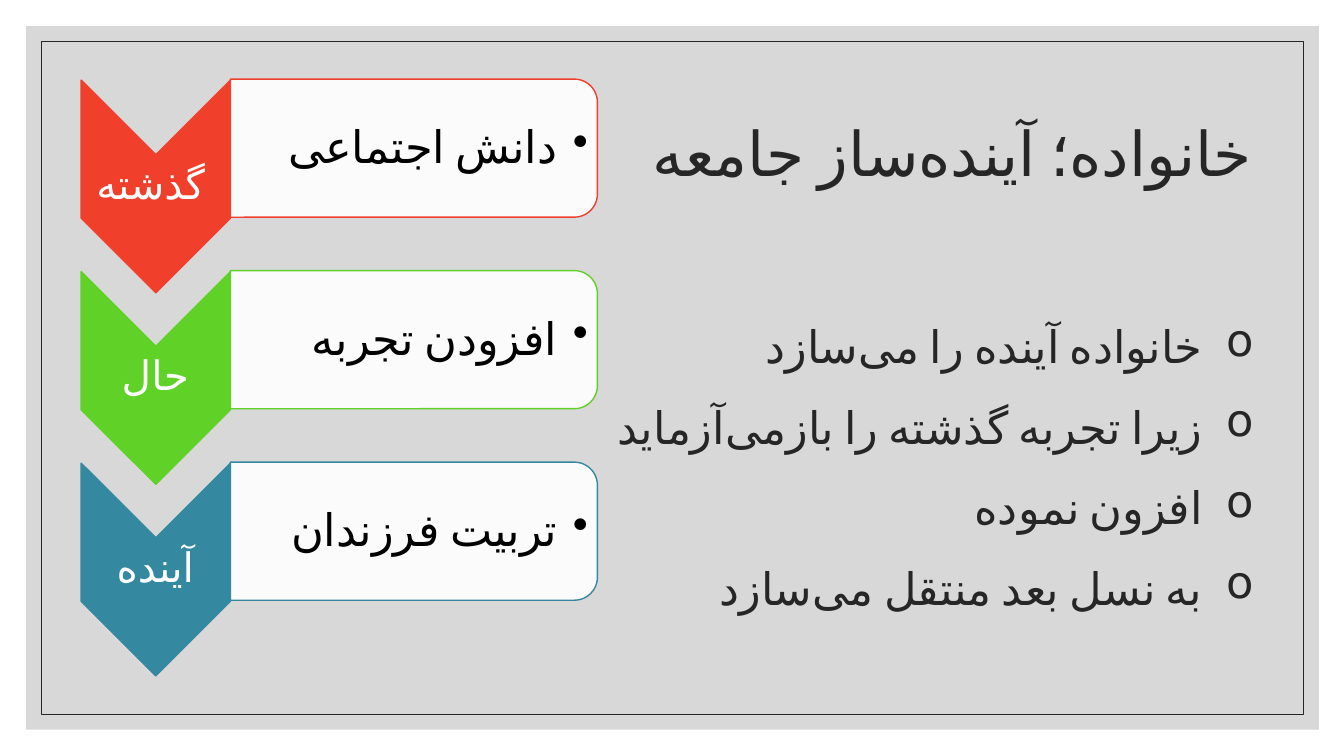
from dataclasses import dataclass

from lxml.etree import SubElement
from pptx import Presentation
from pptx.dml.color import RGBColor
from pptx.enum.shapes import MSO_SHAPE
from pptx.enum.text import MSO_ANCHOR, MSO_AUTO_SIZE, PP_ALIGN
from pptx.oxml.ns import qn
from pptx.shapes.autoshape import Shape
from pptx.slide import Slide
from pptx.util import Inches, Pt

FONT = "Calibri"
DARK = "262626"
STAGE_PITCH = 1.9
SMALL_INSET = 0.02
NON_JOINER = chr(0x200C)


@dataclass
class Box:
    left: float
    top: float
    width: float
    height: float


@dataclass
class TextStyle:
    size: float
    color: str
    alignment: PP_ALIGN
    line_spacing: float = 0.9
    level: int = 0
    bullet: str = ""
    indent: float = 0


@dataclass
class Stage:
    label: str
    detail: str
    color: str


TITLE_STYLE = TextStyle(44, DARK, PP_ALIGN.RIGHT)
BODY_STYLE = TextStyle(32, DARK, PP_ALIGN.JUSTIFY, 1.5, bullet="o", indent=0.5)
LABEL_STYLE = TextStyle(29, "FFFFFF", PP_ALIGN.CENTER)
DETAIL_STYLE = TextStyle(32, "000000", PP_ALIGN.RIGHT, level=1, bullet="•", indent=0.31)

TITLE = f"خانواده؛ آينده{NON_JOINER}ساز جامعه"
BODY_LINES = [
    f"خانواده آینده را می{NON_JOINER}سازد",
    f"زیرا تجربه گذشته را بازمی{NON_JOINER}آزماید",
    "افزون نموده",
    f"به نسل بعد منتقل می{NON_JOINER}سازد",
]
STAGES = [
    Stage(" گذشته", "دانش اجتماعی", "F03F2B"),
    Stage("حال", "افزودن تجربه", "60D127"),
    Stage("آینده", "تربیت فرزندان", "3488A0"),
]


def rgb(color: str) -> RGBColor:
    return RGBColor.from_string(color)


def lengths(box: Box) -> list[int]:
    return [Inches(value) for value in (box.left, box.top, box.width, box.height)]


def add_panel(slide: Slide, kind: MSO_SHAPE, box: Box, fill: str = "", opacity: int = 100,
              line: str = "", line_width: float = 1, rotation: float = 0) -> None:
    shape = slide.shapes.add_shape(kind, *lengths(box))
    shape.shadow.inherit = False
    shape.rotation = rotation
    if fill:
        shape.fill.solid()
        shape.fill.fore_color.rgb = rgb(fill)
        if opacity < 100:
            color = shape._element.spPr.find(qn("a:solidFill"))[0]
            SubElement(color, qn("a:alpha"), val=str(opacity * 1000))
    else:
        shape.fill.background()
    if line:
        shape.line.color.rgb = rgb(line)
        shape.line.width = Pt(line_width)
    else:
        shape.line.fill.background()


def write_text(shape: Shape, lines: list[str], style: TextStyle) -> None:
    frame = shape.text_frame
    frame.text = "\n".join(lines)
    frame.word_wrap = True
    frame.auto_size = MSO_AUTO_SIZE.NONE
    frame.vertical_anchor = MSO_ANCHOR.MIDDLE
    for paragraph in frame.paragraphs:
        paragraph.alignment = style.alignment
        paragraph.line_spacing = style.line_spacing
        paragraph.level = style.level
        properties = paragraph._p.get_or_add_pPr()
        properties.set("rtl", "1")
        properties.set("marL", str(Inches(style.indent)))
        properties.set("indent", str(-Inches(style.indent)))
        if style.bullet:
            SubElement(properties, qn("a:buChar"), char=style.bullet)
        for run in paragraph.runs:
            run.font.size = Pt(style.size)
            run.font.name = FONT
            run.font.color.rgb = rgb(style.color)
            run_properties = run._r.get_or_add_rPr()
            run_properties.set("lang", "fa-IR")
            SubElement(run_properties, qn("a:cs"), typeface=FONT)


def add_text(slide: Slide, box: Box, lines: list[str], style: TextStyle) -> Shape:
    shape = slide.shapes.add_textbox(*lengths(box))
    write_text(shape, lines, style)
    return shape


def set_insets(shape: Shape, left: float) -> None:
    frame = shape.text_frame
    frame.margin_left = Inches(left)
    frame.margin_top = frame.margin_right = frame.margin_bottom = Inches(SMALL_INSET)


def add_stage(slide: Slide, stage: Stage, offset: float) -> None:
    add_panel(slide, MSO_SHAPE.CHEVRON, Box(0.49, 1.11 + offset, 2.11, 1.48),
              fill=stage.color, line=stage.color, rotation=90)
    label = add_text(slide, Box(0.8, 1.53 + offset, 1.48, 0.63), [stage.label], LABEL_STYLE)
    set_insets(label, SMALL_INSET)
    add_panel(slide, MSO_SHAPE.ROUND_2_SAME_RECTANGLE, Box(3.42, -0.35 + offset, 1.37, 3.64),
              fill="FFFFFF", opacity=90, line=stage.color, rotation=90)
    detail = add_text(slide, Box(2.28, 0.86 + offset, 3.58, 1.24), [stage.detail], DETAIL_STYLE)
    set_insets(detail, 0.25)


def add_title(slide: Slide) -> None:
    title = slide.shapes.title
    title.left, title.top, title.width, title.height = lengths(Box(5.68, 0.7, 6.85, 1.7))
    write_text(title, [TITLE], TITLE_STYLE)
    slide.shapes._spTree.append(title._element)


def main() -> None:
    presentation = Presentation()
    presentation.slide_width = Inches(13.33)
    presentation.slide_height = Inches(7.5)
    slide = presentation.slides.add_slide(presentation.slide_layouts[5])
    add_panel(slide, MSO_SHAPE.RECTANGLE, Box(0.26, 0.26, 12.82, 6.98), fill="BFBFBF", opacity=60)
    add_panel(slide, MSO_SHAPE.RECTANGLE, Box(0.41, 0.41, 12.52, 6.68), line=DARK, line_width=0.5)
    add_title(slide)
    add_text(slide, Box(5.36, 2.19, 7.17, 4.61), BODY_LINES, BODY_STYLE)
    for index, stage in enumerate(STAGES):
        add_stage(slide, stage, index * STAGE_PITCH)
    presentation.save("out.pptx")


if __name__ == "__main__":
    main()
